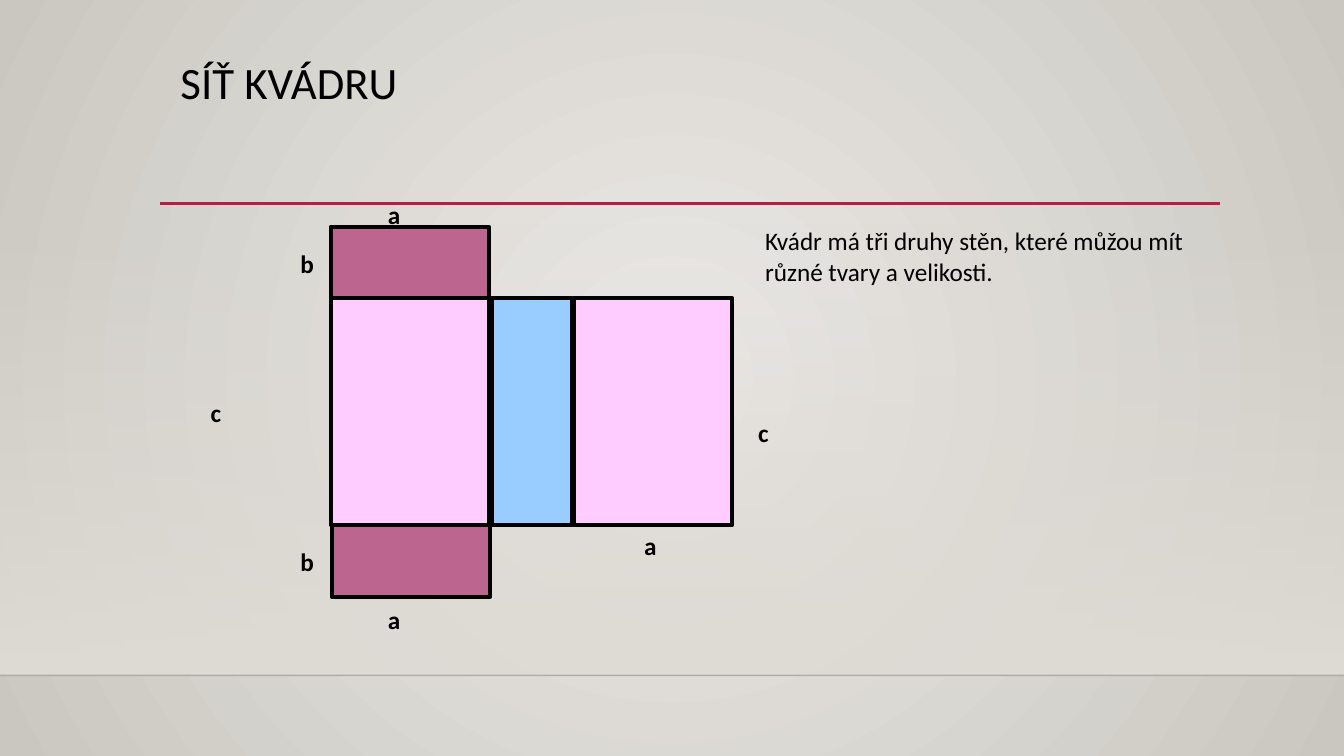
from dataclasses import dataclass
from lxml import etree
from pptx import Presentation
from pptx import util as u
from pptx.dml.color import RGBColor
from pptx.enum import shapes, text
from pptx.oxml import parse_xml
from pptx.oxml.ns import nsdecls, qn


@dataclass(frozen=True)
class Theme:
    font: str = "Calibri"
    title_size: int = 32
    body_size: int = 18
    ink: str = "000000"
    accent: str = "B71E42"
    floor: str = "000001"
    wall: str = "DFDBD5"
    glow: str = "ECEAE7"
    shade: str = "CAC7C1"
    front: str = "FFCCFF"
    side: str = "99CCFF"
    base: str = "BC658E"


THEME = Theme()
WIDTH, HEIGHT = 13.33, 7.5
TITLE = "SÍŤ KVÁDRU"
NOTE = ["Kvádr má tři druhy stěn, které můžou mít", "různé tvary a velikosti."]
EDGE_A, EDGE_B, EDGE_C = 1.57, 0.71, 2.25
SIDE_WIDTH = 0.79
NET_LEFT, NET_TOP = 3.28, 2.96
SIDE_LEFT, BACK_LEFT = 4.88, 5.69
NET_BOTTOM = NET_TOP + EDGE_C
FACES = [
    (NET_LEFT, NET_TOP, EDGE_A, EDGE_C, THEME.front),
    (SIDE_LEFT, NET_TOP, SIDE_WIDTH, EDGE_C, THEME.side),
    (BACK_LEFT, NET_TOP, EDGE_A, EDGE_C, THEME.front),
    (NET_LEFT, NET_TOP - EDGE_B, EDGE_A, EDGE_B, THEME.base),
    (NET_LEFT + 0.01, NET_BOTTOM, EDGE_A, EDGE_B, THEME.base),
]
LABELS = [
    ("c", 1.99, 3.89, 0.33),
    ("b", 2.88, 2.41, 0.35),
    ("b", 2.88, 5.37, 0.35),
    ("a", 3.75, 5.95, 0.34),
    ("a", 3.75, 1.93, 0.76),
    ("c", 7.42, 4.09, 0.33),
    ("a", 6.29, 5.21, 0.34),
]


def inches(*lengths):
    return [u.Inches(length) for length in lengths]


def gradient(stops, direction):
    marks = "".join(
        f'<a:gs pos="{position * 1000}"><a:srgbClr val="{color}">'
        f'<a:alpha val="{alpha * 1000}"/></a:srgbClr></a:gs>'
        for position, color, alpha in stops
    )
    return parse_xml(
        f'<a:gradFill {nsdecls("a")} rotWithShape="1">'
        f"<a:gsLst>{marks}</a:gsLst>{direction}</a:gradFill>"
    )


def replace_solid(properties, fill):
    solid = properties.find(qn("a:solidFill"))
    properties.replace(solid, fill)


def add_background(page):
    page.background.fill.solid()
    properties = page.element.find(".//" + qn("p:bgPr"))
    circle = (
        '<a:path path="circle"><a:fillToRect l="50000" t="50000" '
        'r="50000" b="50000"/></a:path>'
    )
    stops = [(0, THEME.glow, 100), (100, THEME.shade, 100)]
    replace_solid(properties, gradient(stops, circle))


def add_rectangle(page, left, top, width, height, color):
    shape = page.shapes.add_shape(
        shapes.MSO_SHAPE.RECTANGLE, *inches(left, top, width, height)
    )
    shape.shadow.inherit = False
    shape.fill.solid()
    shape.fill.fore_color.rgb = RGBColor.from_string(color)
    return shape


def add_wall(page):
    wall = add_rectangle(page, 0, 2.21, WIDTH, 4.49, THEME.wall)
    wall.line.fill.background()
    stops = [(0, THEME.wall, 0), (100, THEME.wall, 100)]
    fill = gradient(stops, '<a:lin ang="5400000" scaled="0"/>')
    replace_solid(wall.element.spPr, fill)


def add_rule(page, left, right, top, color, weight):
    rule = page.shapes.add_connector(
        shapes.MSO_CONNECTOR.STRAIGHT, *inches(left, top, right, top)
    )
    rule.line.color.rgb = RGBColor.from_string(color)
    rule.line.width = u.Pt(weight)
    etree.SubElement(rule.element.spPr, qn("a:effectLst"))
    return rule


def add_floor(page):
    floor = add_rule(page, 0, WIDTH, 6.7, THEME.floor, 1)
    color = floor.element.spPr.find(".//" + qn("a:srgbClr"))
    etree.SubElement(color, qn("a:alpha"), val="20000")


def write(frame, lines, size, bold=False):
    for number, line in enumerate(lines):
        para = frame.paragraphs[0] if number == 0 else frame.add_paragraph()
        para.alignment = text.PP_ALIGN.LEFT
        span = para.add_run()
        span.text = line
        span.font.name = THEME.font
        span.font.size = u.Pt(size)
        span.font.bold = bold
        span.font.color.rgb = RGBColor.from_string(THEME.ink)


def add_text(page, lines, left, top, width, height, bold=False):
    box = page.shapes.add_textbox(*inches(left, top, width, height))
    box.text_frame.word_wrap = False
    box.text_frame.auto_size = text.MSO_AUTO_SIZE.SHAPE_TO_FIT_TEXT
    write(box.text_frame, lines, THEME.body_size, bold)
    return box


def add_title(page):
    title = page.shapes.title
    title.left, title.top, title.width, title.height = inches(1.69, 0.55, 10.5, 1.15)
    frame = title.text_frame
    frame.auto_size = text.MSO_AUTO_SIZE.NONE
    frame.vertical_anchor = text.MSO_ANCHOR.TOP
    write(frame, [TITLE], THEME.title_size)
    frame.paragraphs[0].line_spacing = 0.9


def main():
    deck = Presentation()
    deck.slide_width, deck.slide_height = inches(WIDTH, HEIGHT)
    page = deck.slides.add_slide(deck.slide_layouts[5])
    add_background(page)
    add_wall(page)
    add_floor(page)
    add_rule(page, 1.59, 12.1, 2.02, THEME.accent, 2.5)
    add_title(page)
    for face in FACES:
        shape = add_rectangle(page, *face)
        shape.line.color.rgb = RGBColor.from_string(THEME.ink)
        shape.line.width = u.Pt(3)
    for name, left, top, width in LABELS:
        label = add_text(page, [name], left, top, width, 0.4, bold=True)
        label.text_frame.word_wrap = width > 0.5
    add_text(page, NOTE, 7.49, 2.19, 4.53, 0.71)
    deck.save("out.pptx")


if __name__ == "__main__":
    main()
